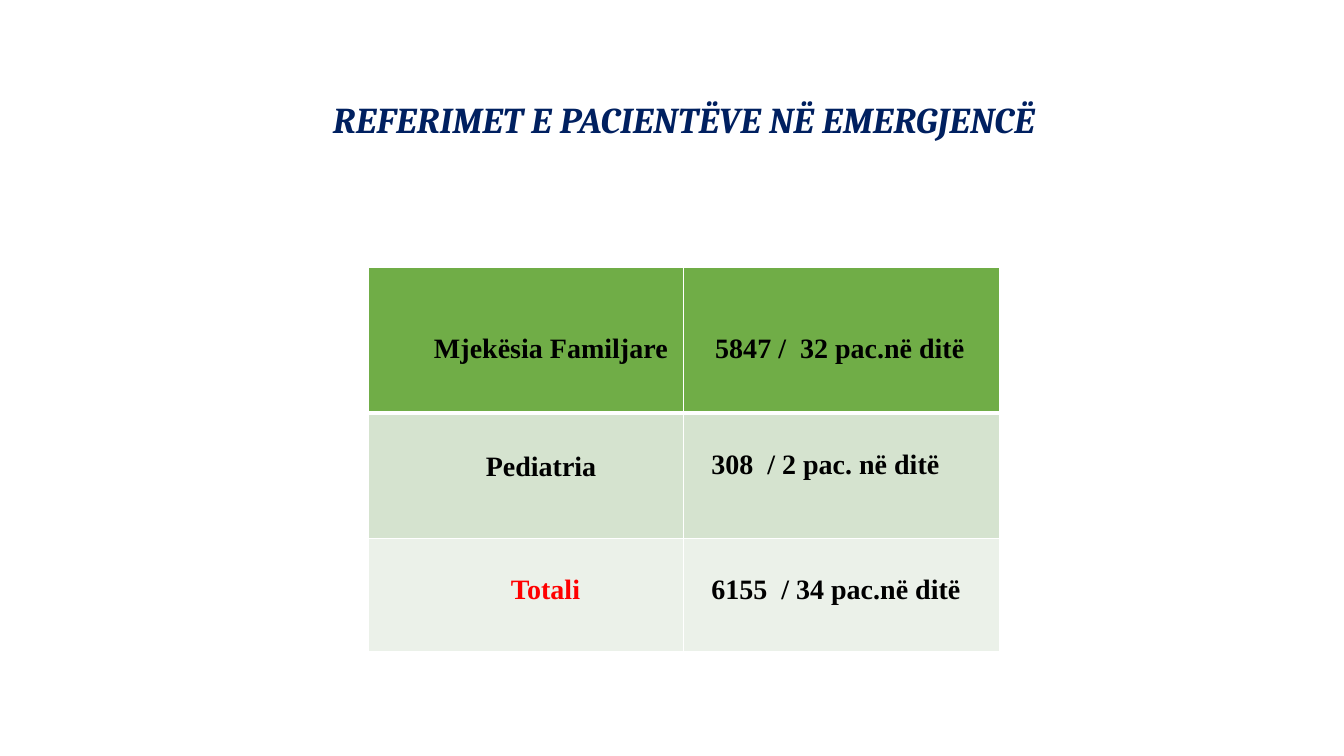
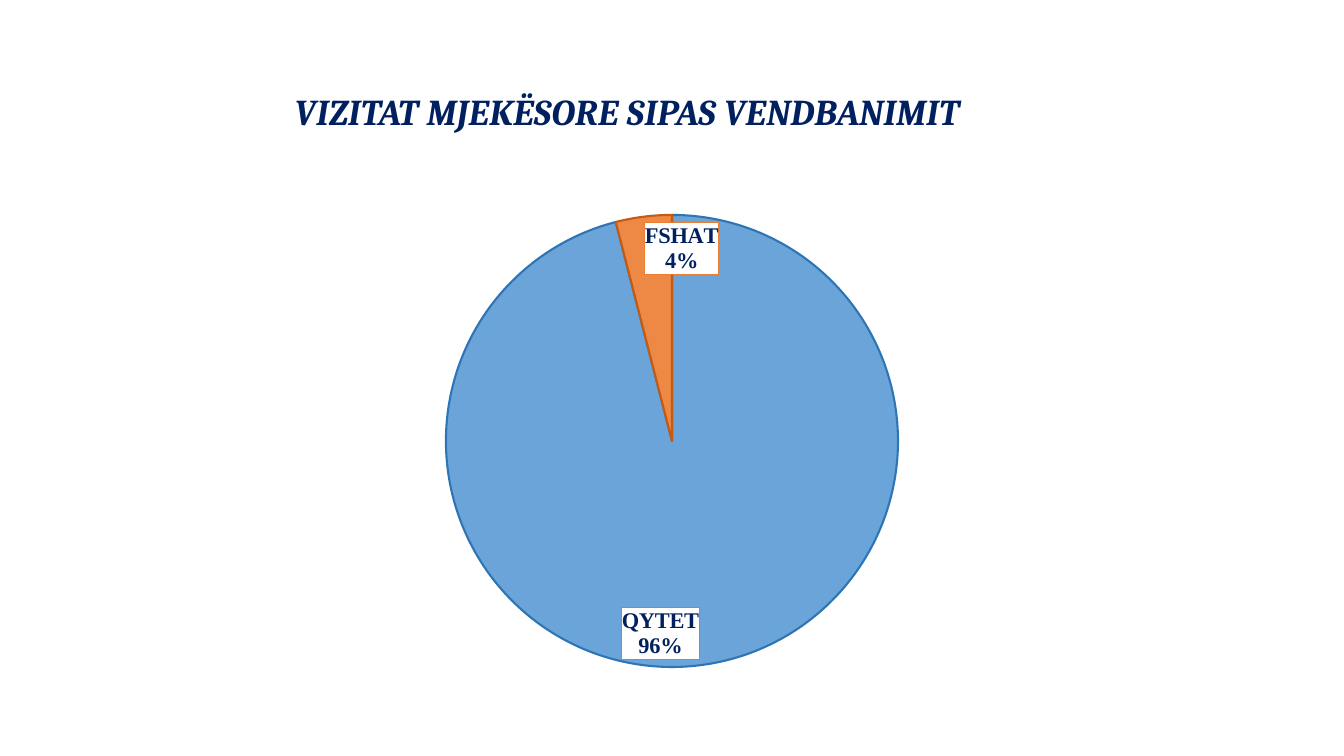
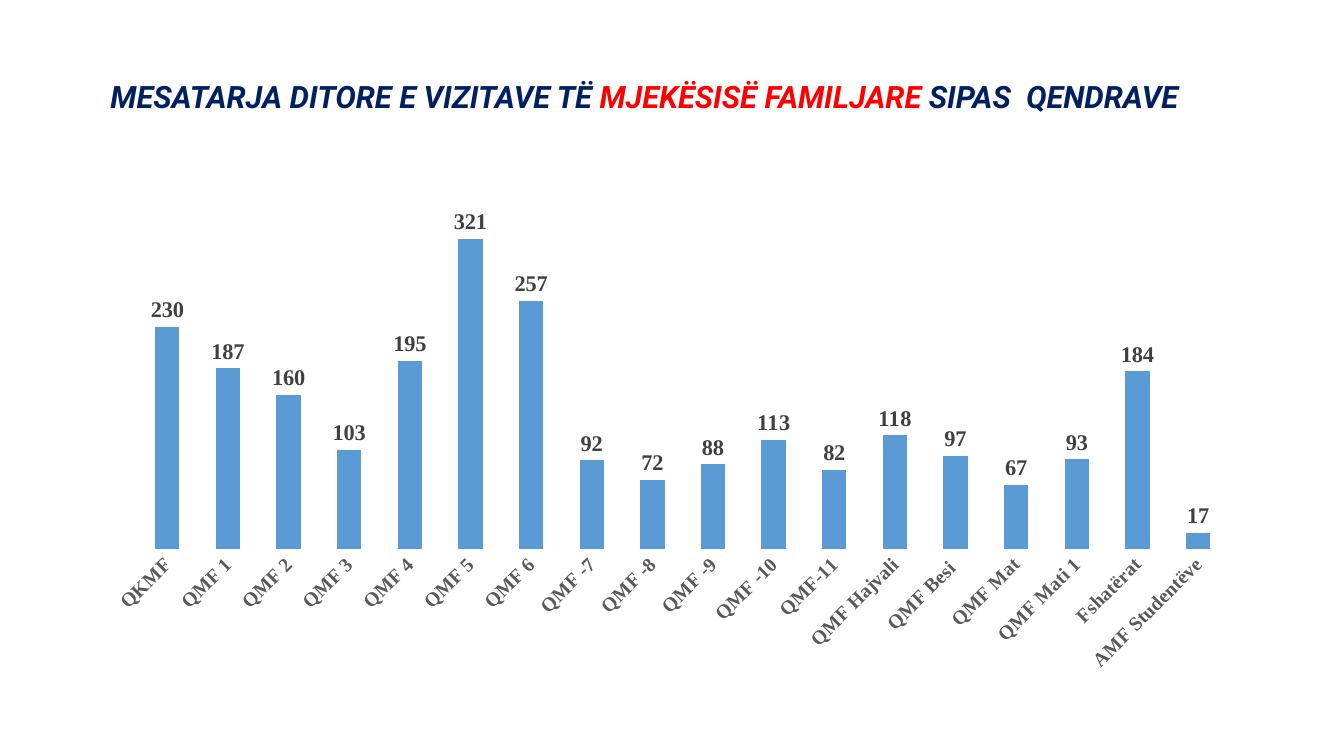
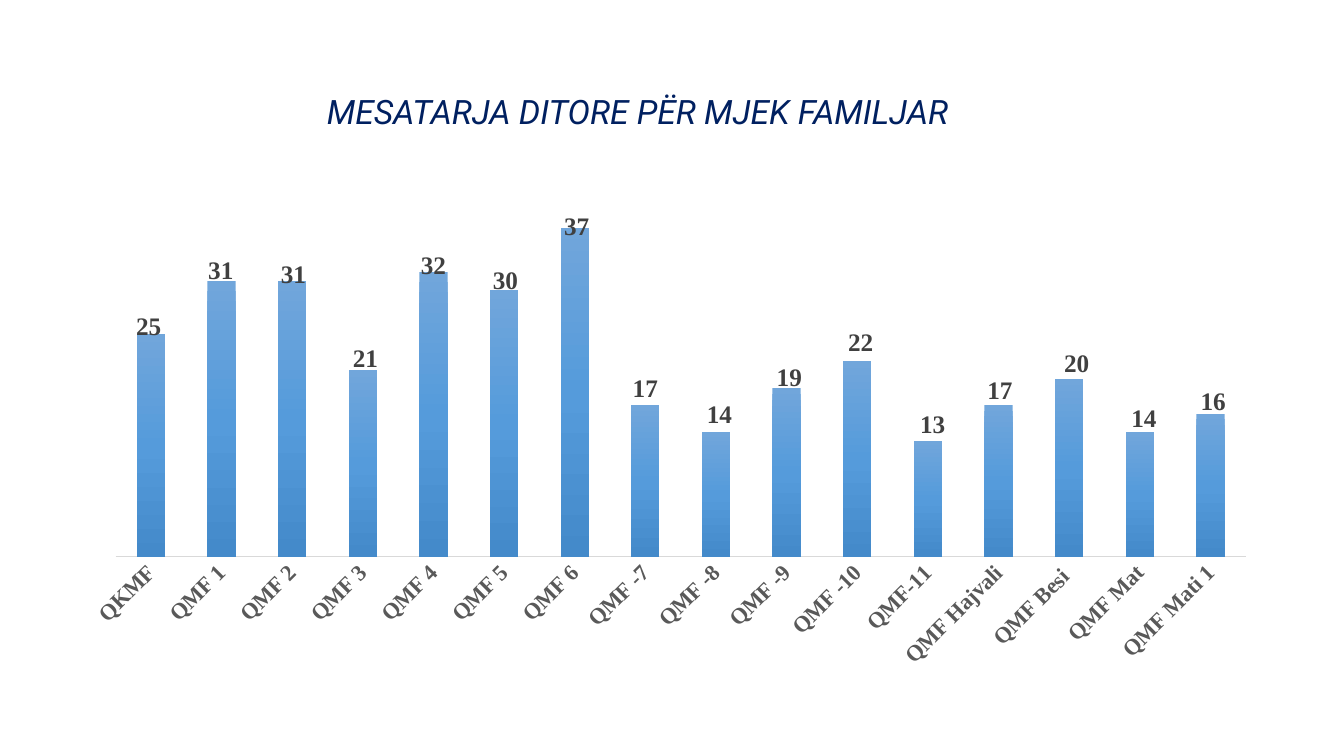
from pptx import Presentation
from pptx.chart.data import CategoryChartData
from pptx.dml.color import RGBColor
from pptx.enum.chart import XL_CHART_TYPE, XL_LABEL_POSITION, XL_TICK_MARK
from pptx.enum.text import MSO_ANCHOR, PP_ALIGN
from pptx.oxml import parse_xml
from pptx.oxml.ns import nsdecls, qn
from pptx.util import Pt

HEX = {
    "navy": "002060", "red": "FF0000", "black": "000000", "white": "FFFFFF",
    "green": "70AD47", "sage": "D5E3CF", "mist": "EBF1E9",
    "blue": "5B9BD5", "orange": "ED7D31", "sea": "2E75B6", "rust": "C55A11",
    "dark": "404040", "gray": "595959", "pale": "D9D9D9",
    "top": "71A6DB", "mid": "559BDB", "base": "448ACA",
}
SERIF = "Times New Roman"
LEFT, WIDE = 66, 828
CHART = (LEFT, 143.6, WIDE, 342.8)
INSET = 3.6


def rgb(name):
    return RGBColor.from_string(HEX[name])


def paint(fill, name):
    fill.solid()
    fill.fore_color.rgb = rgb(name)


def style(font, size, color, name=SERIF, bold=True, italic=False):
    font.size, font.name = Pt(size), name
    font.bold, font.italic = bold, italic
    font.color.rgb = rgb(color)


def place(x, y, rest=""):
    """Manual chart layout, in fractions of the chart."""
    return parse_xml(
        f'<c:layout {nsdecls("c")}><c:manualLayout>{rest}'
        f'<c:x val="{x:.4f}"/><c:y val="{y:.4f}"/></c:manualLayout></c:layout>')


def unlead(series):
    """Turn off the lines that join moved labels to their columns."""
    labels = series._element.find(qn("c:dLbls"))
    for flag in labels.findall(qn("c:showLeaderLines")):
        flag.set("val", "0")
    labels.append(parse_xml(
        f'<c:extLst {nsdecls("c")}><c:ext uri="{{CE6537A1-D6FC-4f65-9D91-7224C49458BB}}" '
        'xmlns:c15="http://schemas.microsoft.com/office/drawing/2012/chart">'
        '<c15:showLeaderLines val="0"/></c:ext></c:extLst>'))


def border(cell, sides):
    """Draw white cell edges; sides maps a tag to a width in points."""
    props = cell._tc.get_or_add_tcPr()
    for spot, (tag, width) in enumerate(sides.items()):
        props.insert(spot, parse_xml(
            f'<a:{tag} {nsdecls("a")} w="{Pt(width)}"><a:solidFill>'
            f'<a:srgbClr val="{HEX["white"]}"/></a:solidFill></a:{tag}>'))


class Deck:
    def __init__(self):
        self.prs = Presentation()
        self.prs.slide_width, self.prs.slide_height = Pt(960), Pt(540)
        self.slide = None

    def title(self, runs, size, indent, shift=0, face="Roboto", bold=True):
        """Start a slide; shift moves the title text down by so many points."""
        self.slide = self.prs.slides.add_slide(self.prs.slide_layouts[5])
        box = self.slide.shapes.title
        box.left, box.top, box.width, box.height = map(Pt, (LEFT, 29, WIDE, 104))
        frame = box.text_frame
        frame.vertical_anchor = MSO_ANCHOR.MIDDLE
        frame.word_wrap = True
        frame.margin_left = Pt(indent)
        frame.margin_top = Pt(INSET + 2 * max(shift, 0))
        frame.margin_bottom = Pt(INSET + 2 * max(-shift, 0))
        para = frame.paragraphs[0]
        para.alignment, para.line_spacing = PP_ALIGN.LEFT, 0.9
        style(para.font, size, "navy", face, bold, True)
        for text, color in runs:
            run = para.add_run()
            run.text = text
            style(run.font, size, color, face, bold, True)

    def table(self, left, top, width, rows):
        """Each row is height, fill, foot line width and its cells."""
        count = len(rows[0][3])
        high = sum(row[0] for row in rows)
        grid = self.slide.shapes.add_table(
            len(rows), count, Pt(left), Pt(top), Pt(width * count), Pt(high)).table
        for r, (height, fill, foot, cells) in enumerate(rows):
            grid.rows[r].height = Pt(height)
            head = rows[r - 1][2] if r else 1
            for c, (text, color, indent, drop) in enumerate(cells):
                cell = grid.cell(r, c)
                cell.margin_left, cell.margin_top = Pt(indent), Pt(drop)
                cell.margin_right = Pt(INSET)
                cell.text = text
                style(cell.text_frame.paragraphs[0].font, 20, color)
                paint(cell.fill, fill)
                border(cell, {"lnL": 1, "lnR": 1, "lnT": head, "lnB": foot})

    def chart(self, kind, names, values):
        data = CategoryChartData()
        data.categories = names
        data.add_series("Series 1", values)
        chart = self.slide.shapes.add_chart(kind, *map(Pt, CHART), data).chart
        chart.has_legend = chart.has_title = False
        style(chart.font, 10, "black", "Calibri", False)
        return chart

    def pie(self, slices):
        """Each slice is name, value, fill and outline."""
        names, values, fills, lines = zip(*slices)
        chart = self.chart(XL_CHART_TYPE.PIE, names, values)
        plot = chart.plots[0]
        plot.vary_by_categories = True
        series = plot.series[0]
        labels = series.data_labels
        labels.show_value = False
        labels.show_percentage = labels.show_category_name = True
        labels.number_format, labels.number_format_is_linked = "0%", False
        labels.position = XL_LABEL_POSITION.INSIDE_END
        style(labels.font, 16, "navy")
        for i, (fill, line) in enumerate(zip(fills, lines)):
            point = series.points[i]
            paint(point.format.fill, fill)
            point.format.line.color.rgb = rgb(line)
            point.format.line.width = Pt(1.5)
            style(point.data_label.font, 16, "navy")
            point.data_label.position = XL_LABEL_POSITION.INSIDE_END
            tint = series._element.xpath("c:dPt/c:spPr/a:solidFill/a:srgbClr")[i]
            tint.append(parse_xml(f'<a:alpha {nsdecls("a")} val="90000"/>'))
            label = series._element.xpath("c:dLbls/c:dLbl")[i]
            for tag, flag in (("Val", 0), ("CatName", 1), ("Percent", 1)):
                label.find(qn(f"c:show{tag}")).set("val", str(flag))
            label.find(qn("c:txPr")).addprevious(parse_xml(
                f'<c:spPr {nsdecls("c", "a")}><a:solidFill><a:srgbClr val="{HEX["white"]}"/>'
                f'</a:solidFill><a:ln w="{Pt(0.75)}"><a:solidFill><a:srgbClr val="{HEX[fill]}"/>'
                f'</a:solidFill></a:ln></c:spPr>'))

    def bars(self, kind, names, values, peak, small, big, rule=None):
        """Columns up to peak; small and big are axis and label text sizes."""
        chart = self.chart(kind, names, values)
        axis = chart.value_axis
        axis.visible = axis.has_major_gridlines = False
        axis.minimum_scale, axis.maximum_scale = 0, peak
        axis = chart.category_axis
        axis.major_tick_mark = axis.minor_tick_mark = XL_TICK_MARK.NONE
        style(axis.tick_labels.font, small, "gray")
        axis._element.xpath("c:txPr/a:bodyPr")[0].set("rot", "-2700000")
        if rule:
            axis.format.line.color.rgb = rgb(rule)
            axis.format.line.width = Pt(1)
        else:
            axis.format.line.fill.background()
        plot = chart.plots[0]
        plot.gap_width, plot.vary_by_categories = 150, False
        series = plot.series[0]
        paint(series.format.fill, "blue")
        series.data_labels.show_value = True
        style(series.data_labels.font, big, "dark")
        return chart, series

    def stack(self, names, values, peak, nudges):
        """Gradient columns; nudges are label moves (right, up) from each top."""
        big, tall = 18, 0.741
        chart, series = self.bars(XL_CHART_TYPE.COLUMN_STACKED, names, values,
                                  peak, 16, big, "pale")
        chart.plots[0].overlap = 100
        area = chart._chartSpace.xpath("c:chart/c:plotArea")[0]
        for old in area.findall(qn("c:layout")):
            area.remove(old)
        frame = place(0.02, 0, '<c:layoutTarget val="inner"/><c:xMode val="edge"/>'
                               '<c:yMode val="edge"/>')
        for tag, size in (("w", 0.975), ("h", tall)):
            frame[0].append(parse_xml(f'<c:{tag} {nsdecls("c")} val="{size}"/>'))
        area.insert(0, frame)
        stops = "".join(
            f'<a:gs pos="{pos}"><a:srgbClr val="{HEX[name]}"/></a:gs>'
            for pos, name in ((0, "top"), (50000, "mid"), (100000, "base")))
        solid = series._element.xpath("c:spPr/a:solidFill")[0]
        solid.getparent().replace(solid, parse_xml(
            f'<a:gradFill {nsdecls("a")}><a:gsLst>{stops}</a:gsLst>'
            f'<a:lin ang="5400000" scaled="0"/></a:gradFill>'))
        for i, (value, (right, up)) in enumerate(zip(values, nudges)):
            style(series.points[i].data_label.font, big, "dark")
            label = series._element.xpath("c:dLbls/c:dLbl")[i]
            half = value / peak * tall / 2
            label.insert(1, place(right / CHART[2], -half - up / CHART[3]))
        unlead(series)


def main():
    deck = Deck()

    deck.title([("REFERIMET E PACIENTËVE NË EMERGJENCË", "navy")],
               26, 171.8, 5.7, "Cambria")
    deck.table(263, 190.8, 225.4, [
        (104.4, "green", 3, [("Mjekësia Familjare", "black", 47, 47.6),
                             ("5847 /  32 pac.në ditë", "black", 22.5, 47.6)]),
        (89.3, "sage", 1, [("Pediatria", "black", 84, 27),
                           ("308  / 2 pac. në ditë", "black", 19.7, 25.6)]),
        (80.6, "mist", 1, [("Totali", "red", 102, 25.6),
                           ("6155  / 34 pac.në ditë", "black", 19.7, 25.6)]),
    ])

    deck.title([("VIZITAT MJEKËSORE SIPAS VENDBANIMIT", "navy")],
               26, 144.5, face="Cambria")
    deck.pie([("QYTET", 96, "blue", "sea"), ("FSHAT", 4, "orange", "rust")])

    names = ["QKMF", *(f"QMF {n}" for n in range(1, 7)),
             *(f"QMF -{n}" for n in range(7, 11)), "QMF-11", "QMF Hajvali",
             "QMF Besi ", "QMF Mat", "QMF Mati 1"]
    deck.title([("MESATARJA DITORE E VIZITAVE TË ", "navy"),
                ("MJEKËSISË FAMILJARE ", "red"),
                ("SIPAS  QENDRAVE", "navy")], 22, 12.9, -10.5)
    _, series = deck.bars(
        XL_CHART_TYPE.COLUMN_CLUSTERED, names + ["Fshatërat", "AMF Studentëve"],
        [230, 187, 160, 103, 195, 321, 257, 92, 72, 88, 113, 82, 118, 97, 67,
         93, 184, 17], 350, 14, 16)
    series.data_labels.position = XL_LABEL_POSITION.OUTSIDE_END

    deck.title([("MESATARJA DITORE PËR MJEK FAMILJAR", "navy")],
               24, 167.5, bold=False)
    deck.stack(
        names, [25, 31, 31, 21, 32, 30, 37, 17, 14, 19, 22, 13, 17, 20, 14, 16], 40,
        [(-1.5, 5), (-0.5, 7), (1, 4), (2, 7.5), (0, 4.5), (1, 6), (1.5, 0.5),
         (0, 11.5), (2.5, 12), (2, 7), (2.5, 12.5), (3.5, 11.5), (1, 10),
         (5.5, 10.5), (3, 9), (2, 9)])

    deck.prs.save("out.pptx")


if __name__ == "__main__":
    main()
